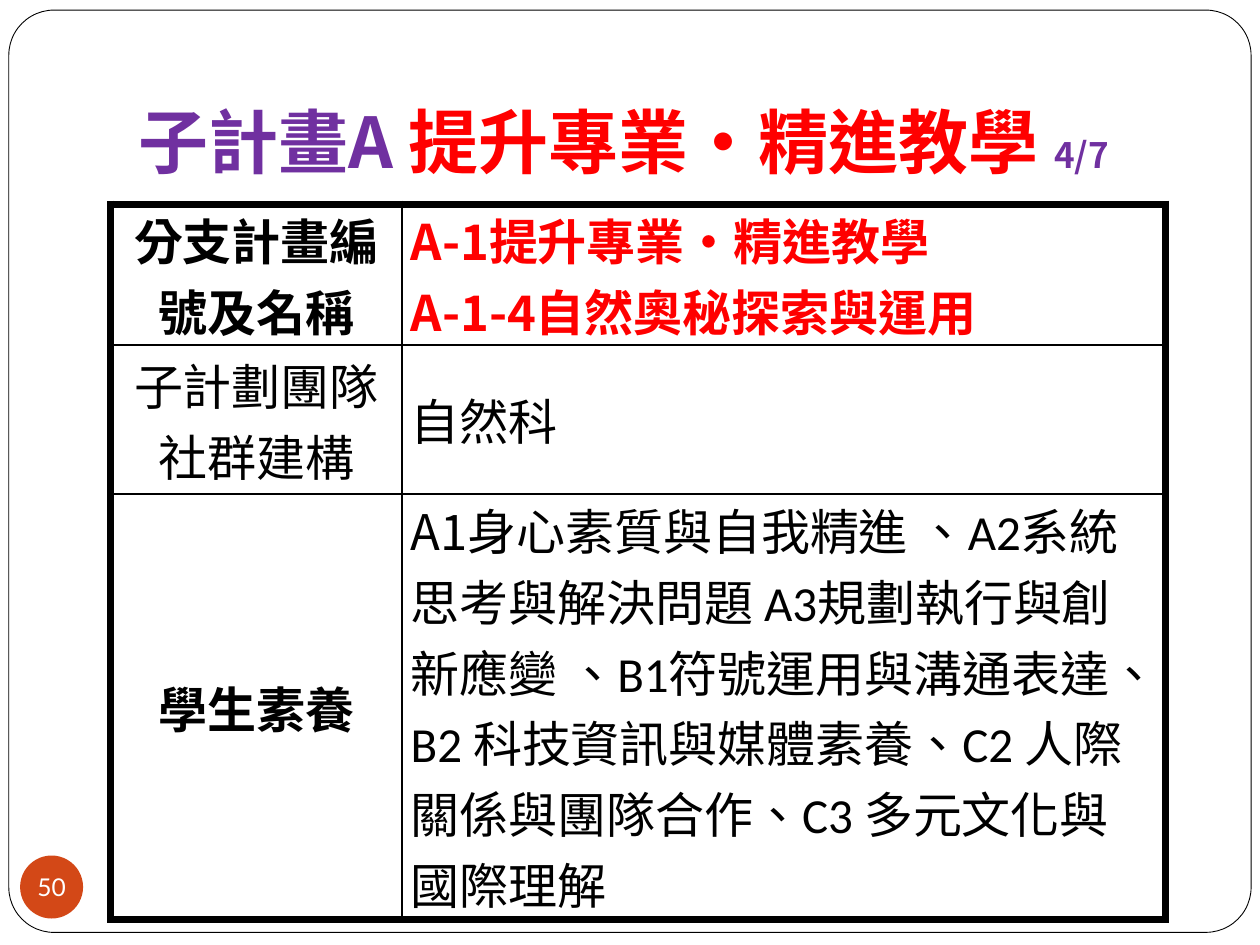
import pptx
import pptx.util
import pptx.dml.color
import pptx.enum.lang
import pptx.enum.shapes
import pptx.enum.text
import pptx.oxml
import pptx.oxml.ns

Inches = pptx.util.Inches
Pt = pptx.util.Pt
ALIGN = pptx.enum.text.PP_ALIGN
ANCHOR = pptx.enum.text.MSO_ANCHOR
SHAPE = pptx.enum.shapes.MSO_SHAPE
CJK = "Noto Sans CJK SC"
SERIF = "Times New Roman"


def rgb(value):
    return pptx.dml.color.RGBColor.from_string(value)


def add_run(p, text, size, font, color, bold):
    r = p.add_run()
    r.text = text
    r.font.size = Pt(size)
    r.font.bold = bold
    r.font.color.rgb = rgb(color)
    r.font.name = font
    r.font.language_id = pptx.enum.lang.MSO_LANGUAGE_ID.TRADITIONAL_CHINESE
    ea = pptx.oxml.parse_xml(f'<a:ea {pptx.oxml.ns.nsdecls("a")} typeface="{CJK}"/>')
    r.font._element.append(ea)


prs = pptx.Presentation()
prs.slide_width = Inches(10)
prs.slide_height = Inches(7.5)
s = prs.slides.add_slide(prs.slide_layouts[6])

frame = s.shapes.add_shape(SHAPE.ROUNDED_RECTANGLE, Inches(0.07), Inches(0.08), Inches(9.86), Inches(7.32))
frame.adjustments[0] = 0.049
frame.shadow.inherit = False
frame.fill.solid()
frame.fill.fore_color.rgb = rgb("FFFFFF")
frame.line.color.rgb = rgb("000000")
frame.line.width = Pt(0.5)

title = s.shapes.add_textbox(Inches(1), Inches(0.3), Inches(8.5), Inches(1.25))
tf = title.text_frame
tf.word_wrap = True
tf.vertical_anchor = ANCHOR.BOTTOM
tf.margin_bottom = Inches(0.1)
for text, size, color in [
    ("子計畫A ", 40, "7030A0"),
    ("提升專業‧精進教學 ", 40, "FF0000"),
    ("4/7", 20, "7030A0"),
]:
    add_run(tf.paragraphs[0], text, size, CJK, color, True)

competences = (
    "身心素質與自我精進 、A2系統思考與解決問題 A3規劃執行與創新應變 、"
    "B1符號運用與溝通表達、B2 科技資訊與媒體素養、C2 人際關係與團隊合作、"
    "C3 多元文化與國際理解"
)
rows = [
    [
        (ALIGN.CENTER, [[("分支計畫編號及名稱", SERIF, "000000", True)]]),
        (ALIGN.JUSTIFY, [
            [("A-1提升專業‧精進教學", CJK, "FF0000", True)],
            [("A-1-4自然奧秘探索與運用", CJK, "FF0000", True)],
        ]),
    ],
    [
        (ALIGN.CENTER, [[("子計劃團隊社群建構", SERIF, "000000", False)]]),
        (ALIGN.JUSTIFY, [[("自然科", "Calibri", "000000", False)]]),
    ],
    [
        (ALIGN.CENTER, [[("學生素養", SERIF, "000000", True)]]),
        (ALIGN.LEFT, [[("A1", CJK, "000000", False), (competences, "Calibri", "000000", False)]]),
    ],
]
row_heights = [1.12, 1.18, 3.38]
table = s.shapes.add_table(
    3, 2, Inches(0.88), Inches(1.62), Inches(8.37), Inches(sum(row_heights))
).table
table.first_row = False
table.horz_banding = False
for column, width in zip(table.columns, [2.31, 6.06]):
    column.width = Inches(width)
for row, height in zip(table.rows, row_heights):
    row.height = Inches(height)

for i, row in enumerate(rows):
    for j, (align, paragraphs) in enumerate(row):
        cell = table.cell(i, j)
        cell.margin_left = cell.margin_right = Inches(0.07)
        cell.margin_top = cell.margin_bottom = 0
        cell.vertical_anchor = ANCHOR.TOP if (i, j) == (2, 1) else ANCHOR.MIDDLE
        cell.fill.solid()
        cell.fill.fore_color.rgb = rgb("FFFFFF")
        outer_edges = {"L": j == 0, "R": j == 1, "T": i == 0, "B": i == 2}
        for k, (side, outer) in enumerate(outer_edges.items()):
            border = pptx.oxml.parse_xml(
                f'<a:ln{side} {pptx.oxml.ns.nsdecls("a")} w="{Pt(4.5 if outer else 1)}">'
                '<a:solidFill><a:srgbClr val="000000"/></a:solidFill>'
                f'</a:ln{side}>'
            )
            cell._tc.get_or_add_tcPr().insert(k, border)
        tf = cell.text_frame
        for k, runs in enumerate(paragraphs):
            p = tf.add_paragraph() if k else tf.paragraphs[0]
            p.alignment = align
            for text, font, color, bold in runs:
                add_run(p, text, 28, font, color, bold)

badge = s.shapes.add_shape(SHAPE.OVAL, Inches(0.16), Inches(6.79), Inches(0.5), Inches(0.5))
badge.shadow.inherit = False
badge.fill.solid()
badge.fill.fore_color.rgb = rgb("D34817")
badge.line.fill.background()
tf = badge.text_frame
tf.word_wrap = False
tf.vertical_anchor = ANCHOR.MIDDLE
tf.margin_left = tf.margin_right = tf.margin_top = tf.margin_bottom = 0
tf.paragraphs[0].alignment = ALIGN.CENTER
add_run(tf.paragraphs[0], "50", 14, "Lato", "FFFFFF", False)

prs.save("out.pptx")
